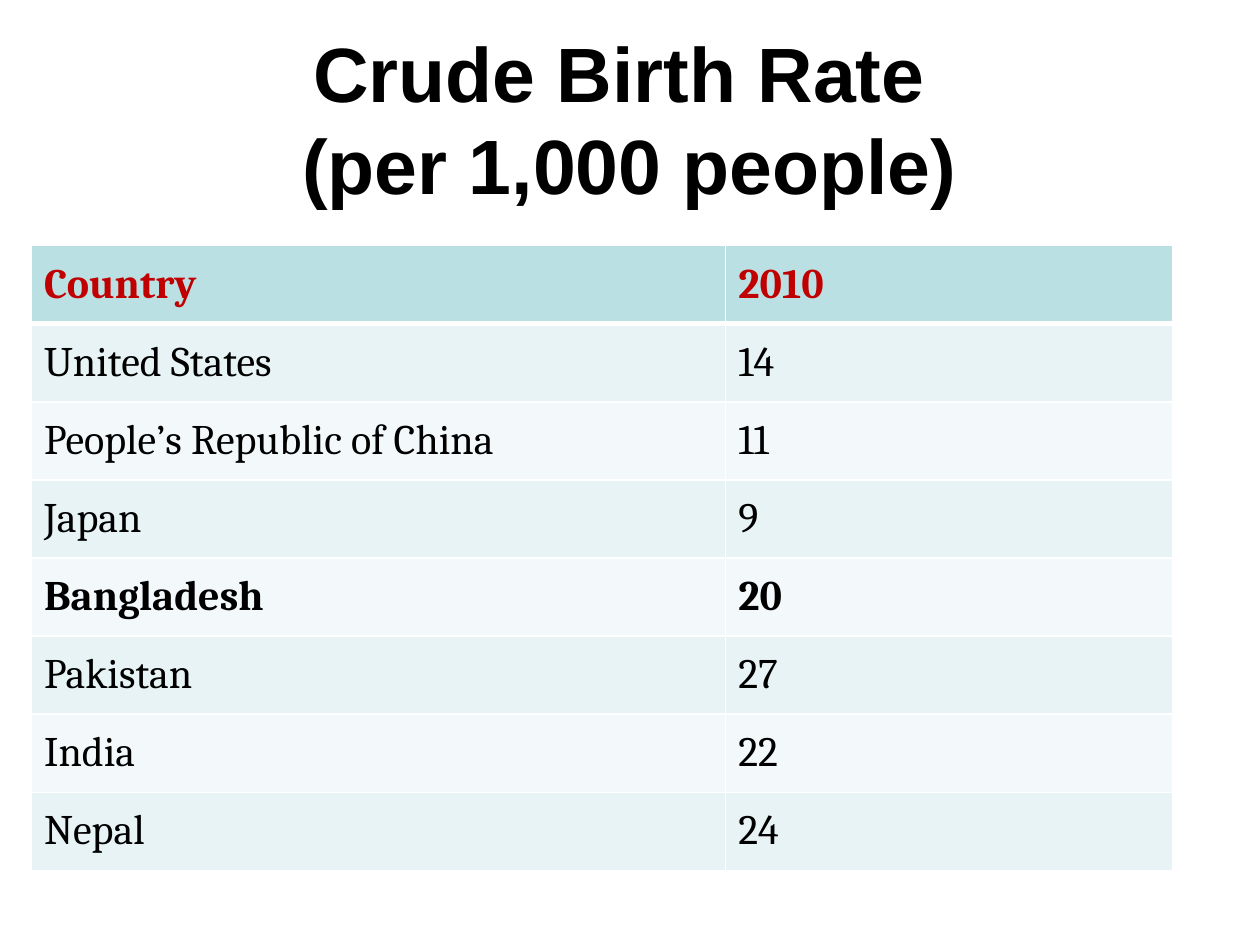
from lxml import etree
from pptx import Presentation
from pptx.dml.color import RGBColor
from pptx.enum.text import MSO_ANCHOR, PP_ALIGN
from pptx.oxml.ns import qn
from pptx.util import Inches, Pt

MIDDLE = MSO_ANCHOR.MIDDLE
CENTER = PP_ALIGN.CENTER
BLACK = RGBColor(0x00, 0x00, 0x00)
WHITE = RGBColor(0xFF, 0xFF, 0xFF)
RED = RGBColor(0xC0, 0x00, 0x00)
TEAL = RGBColor(0xBB, 0xE0, 0xE3)
BANDS = (RGBColor(0xF3, 0xF9, 0xFA), RGBColor(0xE7, 0xF3, 0xF4))

TITLE = "Crude Birth Rate \v(per 1,000 people)"
HIGHLIGHT = "Bangladesh"
BIRTH_RATES = (
    ("Country", "2010"),
    ("United States", "14"),
    ("People’s Republic of China", "11"),
    ("Japan", "9"),
    (HIGHLIGHT, "20"),
    ("Pakistan", "27"),
    ("India", "22"),
    ("Nepal", "24"),
)


class SlideBuilder:
    """Holds the style and current slide; lengths are inches on a 10 by 7.5 grid."""

    title_font, title_size = "Arial", Pt(44)
    table_font, table_size = "Cambria", Pt(24)
    thin, thick = Pt(1), Pt(3)

    def __init__(self, deck):
        self.slide = deck.slides.add_slide(deck.slide_layouts[6])

    def style_text(self, para, name, size, color, bold):
        for span in para.runs:
            font = span.font
            font.name, font.size, font.bold = name, size, bold
            font.color.rgb = color

    def title(self, text, left, top, width, height):
        box = self.slide.shapes.add_textbox(*map(Inches, (left, top, width, height)))
        frame = box.text_frame
        frame.word_wrap = True
        frame.vertical_anchor = MIDDLE
        para = frame.paragraphs[0]
        para.text = text
        para.alignment = CENTER
        self.style_text(para, self.title_font, self.title_size, BLACK, True)

    def borders(self, cell, top, bottom):
        properties = cell._tc.get_or_add_tcPr()
        widths = {"L": self.thin, "R": self.thin, "T": top, "B": bottom}
        for side, width in widths.items():
            line = etree.SubElement(properties, qn(f"a:ln{side}"), w=str(width))
            fill = etree.SubElement(line, qn("a:solidFill"))
            etree.SubElement(fill, qn("a:srgbClr"), val=str(WHITE))

    def table(self, rows, left, top, widths, row_height):
        frame = self.slide.shapes.add_table(
            len(rows), len(widths), Inches(left), Inches(top),
            Inches(sum(widths)), Inches(row_height * len(rows)))
        table = frame.table
        for column, width in zip(table.columns, widths):
            column.width = Inches(width)
        for index, values in enumerate(rows):
            header = index == 0
            color = RED if header else BLACK
            bold = header or values[0] == HIGHLIGHT
            for cell, value in zip(table.rows[index].cells, values):
                cell.text = value
                cell.vertical_anchor = MIDDLE
                self.borders(cell, self.thick if index == 1 else self.thin,
                             self.thick if header else self.thin)
                cell.fill.solid()
                cell.fill.fore_color.rgb = TEAL if header else BANDS[index % 2]
                self.style_text(cell.text_frame.paragraphs[0], self.table_font,
                                self.table_size, color, bold)


def main():
    deck = Presentation()
    deck.slide_width, deck.slide_height = Inches(10), Inches(7.5)
    builder = SlideBuilder(deck)
    builder.title(TITLE, 0, 0.31, 10, 1.25)
    builder.table(BIRTH_RATES, 0.25, 1.95, (5.51, 3.55), 0.62)
    deck.save("out.pptx")


if __name__ == "__main__":
    main()
